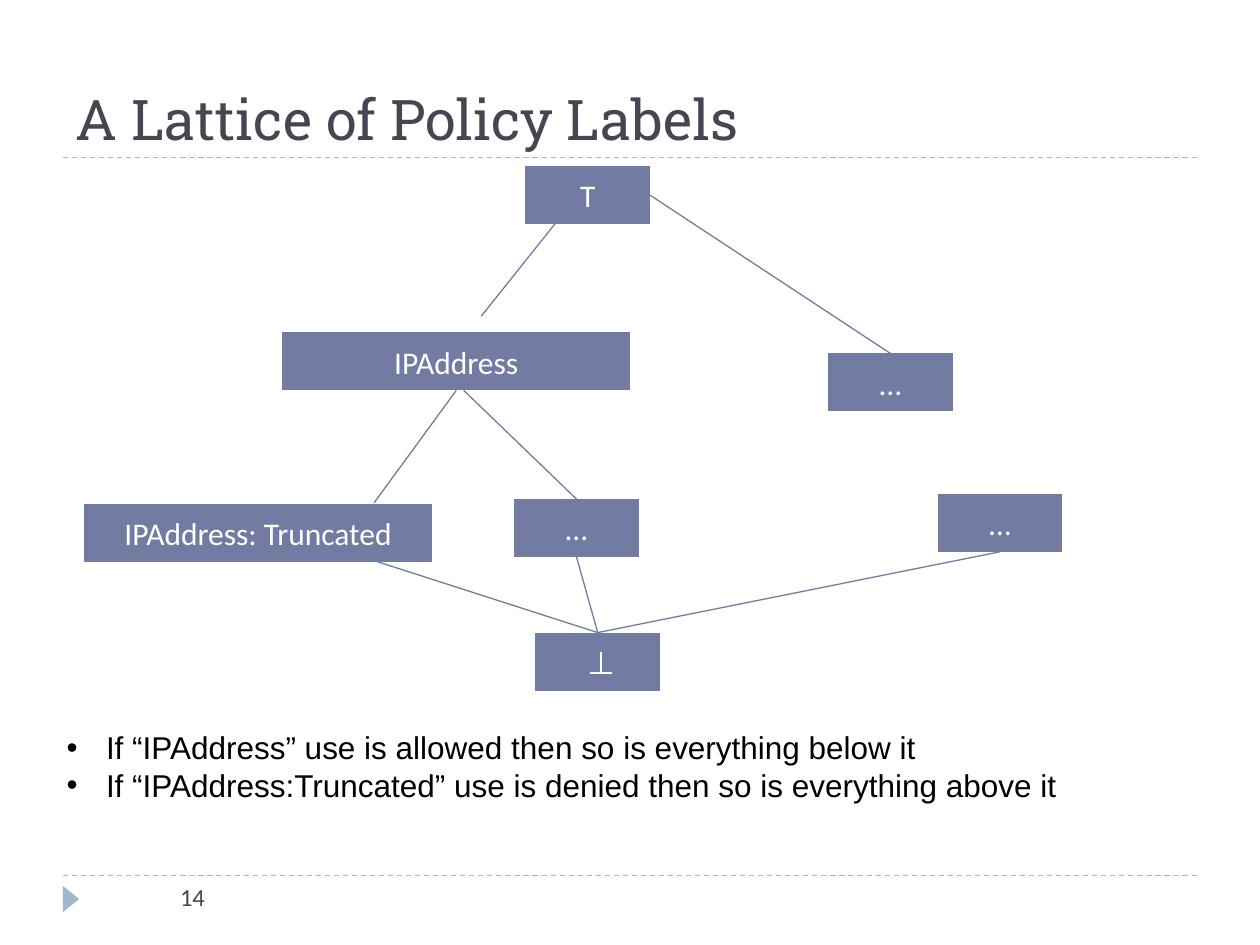
from lxml.etree import SubElement
from pptx import Presentation
from pptx.dml.color import RGBColor
from pptx.enum.dml import MSO_LINE
from pptx.enum.shapes import MSO_CONNECTOR, MSO_SHAPE
from pptx.enum.text import MSO_ANCHOR, PP_ALIGN
from pptx.oxml.ns import qn
from pptx.util import Pt

INK = RGBColor(0x46, 0x46, 0x53)
NODE = RGBColor(0x72, 0x7C, 0xA3)
RULE = RGBColor(0x9F, 0xB8, 0xCD)
WHITE = RGBColor(0xFF, 0xFF, 0xFF)
BLACK = RGBColor(0, 0, 0)

TITLE = "A Lattice of Policy Labels"
PAGE = "14"
BULLETS = [
    "If “IPAddress” use is allowed then so is everything below it",
    "If “IPAddress:Truncated” use is denied then so is everything above it",
]

NARROW, WIDE, NODE_H = 71.3, 198.7, 33.1
# name: (label, left, top, width)
NODES = {
    "top": ("T", 300.2, 95, NARROW),
    "address": ("IPAddress", 161.4, 190, WIDE),
    "other": ("…", 473.2, 202, NARROW),
    "truncated": ("IPAddress: Truncated", 48.2, 288, WIDE),
    "middle": ("…", 293.8, 285.2, NARROW),
    "right": ("…", 535.8, 282.2, NARROW),
    "bottom": (" ⊥", 305.9, 361.5, NARROW),
}

TOP_SIDE, BOTTOM_SIDE, RIGHT_SIDE = 0, 2, 3
# Each end is a (node name, side) or a free (x, y) point
EDGES = [
    ((326.2, 116.6), (275, 180.7)),
    (("top", RIGHT_SIDE), ("other", TOP_SIDE)),
    (("address", BOTTOM_SIDE), (213.8, 287.3)),
    ((265, 223.1), ("middle", TOP_SIDE)),
    ((213.8, 320.4), ("bottom", TOP_SIDE)),
    (("middle", BOTTOM_SIDE), ("bottom", TOP_SIDE)),
    (("right", BOTTOM_SIDE), ("bottom", TOP_SIDE)),
]

RULE_TOPS = [500.4, 90]
RULE_LEFT, RULE_RIGHT = 36, 684


def write(p, text, name, size, color):
    r = p.add_run()
    r.text = text
    for key, value in {"name": name, "size": Pt(size)}.items():
        setattr(r.font, key, value)
    r.font.color.rgb = color


def add_text(shapes, box, lines, name, size, color, anchor=MSO_ANCHOR.TOP):
    tf = shapes.add_textbox(*map(Pt, box)).text_frame
    tf.word_wrap = True
    tf.vertical_anchor = anchor
    for i, line in enumerate(lines):
        p = tf.add_paragraph() if i else tf.paragraphs[0]
        write(p, line, name, size, color)
    return tf


def add_solid(shapes, kind, box, color):
    sp = shapes.add_shape(kind, *map(Pt, box))
    sp.shadow.inherit = False
    sp.fill.solid()
    sp.fill.fore_color.rgb = color
    sp.line.fill.background()
    return sp


def add_line(shapes, start, end, color):
    line = shapes.add_connector(MSO_CONNECTOR.STRAIGHT, *map(Pt, start + end))
    line.line.color.rgb = color
    line.line.width = Pt(0.75)
    SubElement(line._element.spPr, qn("a:effectLst"))
    return line


def add_edge(shapes, nodes, start, end):
    """Join two ends, gluing those that name a node."""
    points = [(0, 0) if end_[0] in nodes else end_ for end_ in (start, end)]
    line = add_line(shapes, *points, NODE)
    for (target, side), connect in ((start, line.begin_connect), (end, line.end_connect)):
        if target in nodes:
            connect(nodes[target], side)


def add_bullet(p, indent):
    pPr = p._p.get_or_add_pPr()
    pPr.set("marL", str(Pt(indent)))
    pPr.set("indent", str(-Pt(indent)))
    SubElement(pPr, qn("a:buFont")).set("typeface", "Arial")
    SubElement(pPr, qn("a:buChar")).set("char", "•")


def main():
    prs = Presentation()
    prs.slide_width, prs.slide_height = Pt(720), Pt(540)
    s = prs.slides.add_slide(prs.slide_layouts[6])
    shapes = s.shapes

    for y in RULE_TOPS:
        rule = add_line(shapes, (RULE_LEFT, y), (RULE_RIGHT, y), RULE)
        rule.line.dash_style = MSO_LINE.DASH
    marker = add_solid(shapes, MSO_SHAPE.ISOSCELES_TRIANGLE, (33.1, 509, 15, 9.4), RULE)
    marker.rotation = 90

    add_text(shapes, (36, 12.2, 648, 77.8), [TITLE], "Roboto Slab", 32, INK, MSO_ANCHOR.BOTTOM)
    add_text(shapes, (95.8, 500.4, 95.8, 28.8), [PAGE], "Calibri", 14, INK)

    nodes = {}
    for key, (label, x, y, width) in NODES.items():
        sp = add_solid(shapes, MSO_SHAPE.FLOWCHART_PROCESS, (x, y, width, NODE_H), NODE)
        tf = sp.text_frame
        tf.vertical_anchor = MSO_ANCHOR.MIDDLE
        p = tf.paragraphs[0]
        p.alignment = PP_ALIGN.CENTER
        write(p, label, "Calibri", 18, WHITE)
        nodes[key] = sp

    for start, end in EDGES:
        add_edge(shapes, nodes, start, end)

    tf = add_text(shapes, (31, 412.6, 657.4, 51), BULLETS, "Arial", 18, BLACK)
    for p in tf.paragraphs:
        add_bullet(p, 22.5)

    prs.save("out.pptx")


if __name__ == "__main__":
    main()
